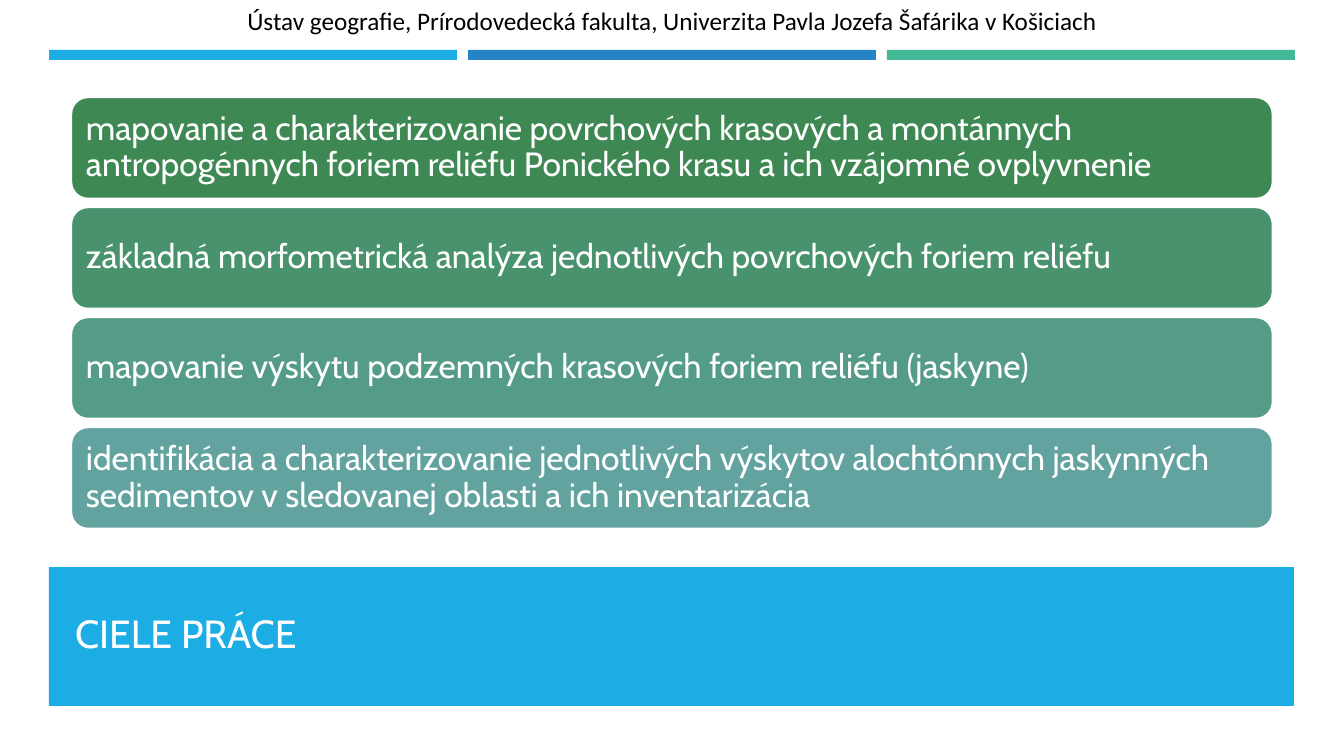
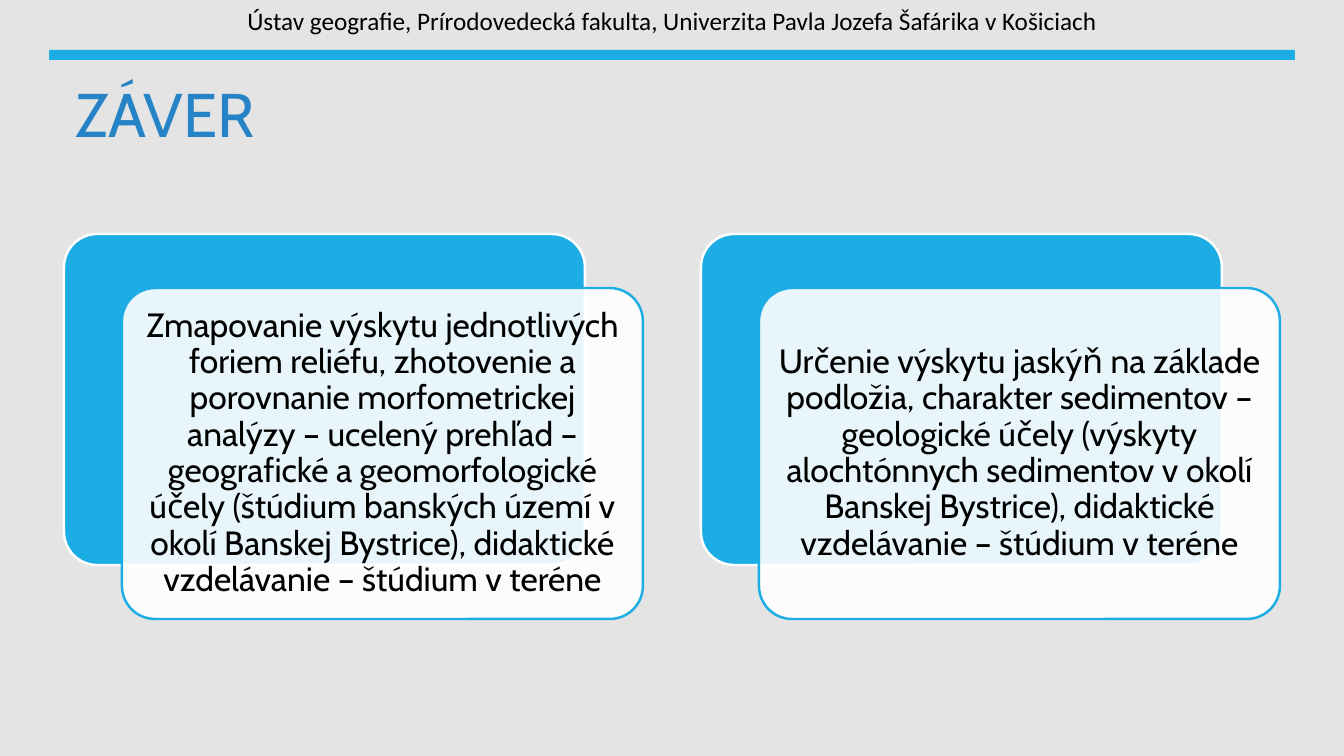
"""Build two slides: the goals and the conclusion of a thesis on karst relief."""
import pptx
import pptx.util
import pptx.dml.color
import pptx.enum.shapes
import pptx.enum.text
import pptx.oxml.ns
from lxml import etree

PX = 12192000 / 1344
HUES = {"sky": "1CADE4", "blue": "2683C6", "mint": "42BA97", "white": "FFFFFF",
        "black": "000000", "snow": "FFFEFF", "grey": "E4E4E4",
        "moss": "3E8853", "fern": "49926E", "sage": "549C88", "teal": "62A39F"}
RGB = {name: pptx.dml.color.RGBColor.from_string(code) for name, code in HUES.items()}
KIND = pptx.enum.shapes.MSO_SHAPE
ALIGN = pptx.enum.text.PP_ALIGN
ANCHOR = pptx.enum.text.MSO_ANCHOR
HEAD = "Ústav geografie, Prírodovedecká fakulta, Univerzita Pavla Jozefa Šafárika v Košiciach"


def box(slide, kind, place, fill, edge=None):
    shape = slide.shapes.add_shape(kind, *[round(n * PX) for n in place])
    shape.shadow.inherit = False
    shape.fill.solid()
    shape.fill.fore_color.rgb = RGB[fill]
    if edge:
        shape.line.color.rgb = RGB[edge]
        shape.line.width = pptx.util.Pt(1.75)
    else:
        shape.line.fill.background()
    return shape


def write(shape, text, size, hue, align=ALIGN.LEFT, anchor=ANCHOR.TOP, font="Cabin", pad=None):
    frame = shape.text_frame
    frame.word_wrap = True
    frame.auto_size = pptx.enum.text.MSO_AUTO_SIZE.NONE
    frame.vertical_anchor = anchor
    para = frame.paragraphs[0]
    para.alignment = align
    if pad:
        frame.margin_left = frame.margin_right = round(pad * PX)
        frame.margin_top = frame.margin_bottom = round(pad * PX)
        para.line_spacing = 0.9
    run = para.add_run()
    run.text = text
    run.font.name = font
    run.font.size = pptx.util.Pt(size)
    run.font.color.rgb = RGB[hue]


deck = pptx.Presentation()
deck.slide_width = round(1344 * PX)
deck.slide_height = round(756 * PX)
goals, close = [deck.slides.add_slide(deck.slide_layouts[5]) for _ in range(2)]

for slide, back, bars in ((goals, "white", ("sky", "blue", "mint")), (close, "grey", ("sky",))):
    slide.background.fill.solid()
    slide.background.fill.fore_color.rgb = RGB[back]
    step = 1257 // len(bars)
    for i, hue in enumerate(bars):
        box(slide, KIND.RECTANGLE, (49 + i * step, 50, step - 11, 10), hue)
    head = slide.shapes.add_textbox(0, 0, round(1344 * PX), round(40 * PX))
    write(head, HEAD, 18, "black", ALIGN.CENTER, font="Calibri")

box(goals, KIND.RECTANGLE, (49, 567, 1245, 139), "sky")
titles = ((goals, "CIELE PRÁCE", 581, 80, 28, "snow", ANCHOR.BOTTOM),
          (close, "ZÁVER", 71, 121, 44, "blue", ANCHOR.TOP))
for slide, text, top, high, size, hue, anchor in titles:
    title = slide.shapes.title
    title.left, title.top, title.width, title.height = [
        round(n * PX) for n in (65, top, 1216, high)]
    write(title, text, size, hue, anchor=anchor)
    title.element.getparent().append(title.element)

aims = (
    ("moss", "mapovanie a charakterizovanie povrchových krasových a montánnych "
             "antropogénnych foriem reliéfu Ponického krasu a ich vzájomné ovplyvnenie"),
    ("fern", "základná morfometrická analýza jednotlivých povrchových foriem reliéfu"),
    ("sage", "mapovanie výskytu podzemných krasových foriem reliéfu (jaskyne)"),
    ("teal", "identifikácia a charakterizovanie jednotlivých výskytov alochtónnych "
             "jaskynných sedimentov v sledovanej oblasti a ich inventarizácia"),
)
for i, (hue, text) in enumerate(aims):
    aim = box(goals, KIND.ROUNDED_RECTANGLE, (71, 97 + i * 110, 1202, 102), hue, "white")
    write(aim, text, 24, "white", anchor=ANCHOR.MIDDLE, pad=10)

ends = (
    "Zmapovanie výskytu jednotlivých foriem reliéfu, zhotovenie a porovnanie "
    "morfometrickej analýzy – ucelený prehľad – geografické a geomorfologické účely "
    "(štúdium banských území v okolí Banskej Bystrice), didaktické vzdelávanie – "
    "štúdium v teréne",
    "Určenie výskytu jaskýň na základe podložia, charakter sedimentov – geologické "
    "účely (výskyty alochtónnych sedimentov v okolí Banskej Bystrice), didaktické "
    "vzdelávanie – štúdium v teréne",
)
for i, text in enumerate(ends):
    left = 64 + i * 637
    rear = box(close, KIND.ROUNDED_RECTANGLE, (left, 234, 521, 331), "sky", "white")
    card = box(close, KIND.ROUNDED_RECTANGLE, (left + 58, 288, 521, 331), "white", "sky")
    rear.adjustments[0] = card.adjustments[0] = 0.1
    tint = card.element.spPr.find(pptx.oxml.ns.qn("a:solidFill"))[0]
    etree.SubElement(tint, pptx.oxml.ns.qn("a:alpha"), val="90000")
    write(card, text, 24, "black", ALIGN.CENTER, ANCHOR.MIDDLE, pad=10)

deck.save("out.pptx")
